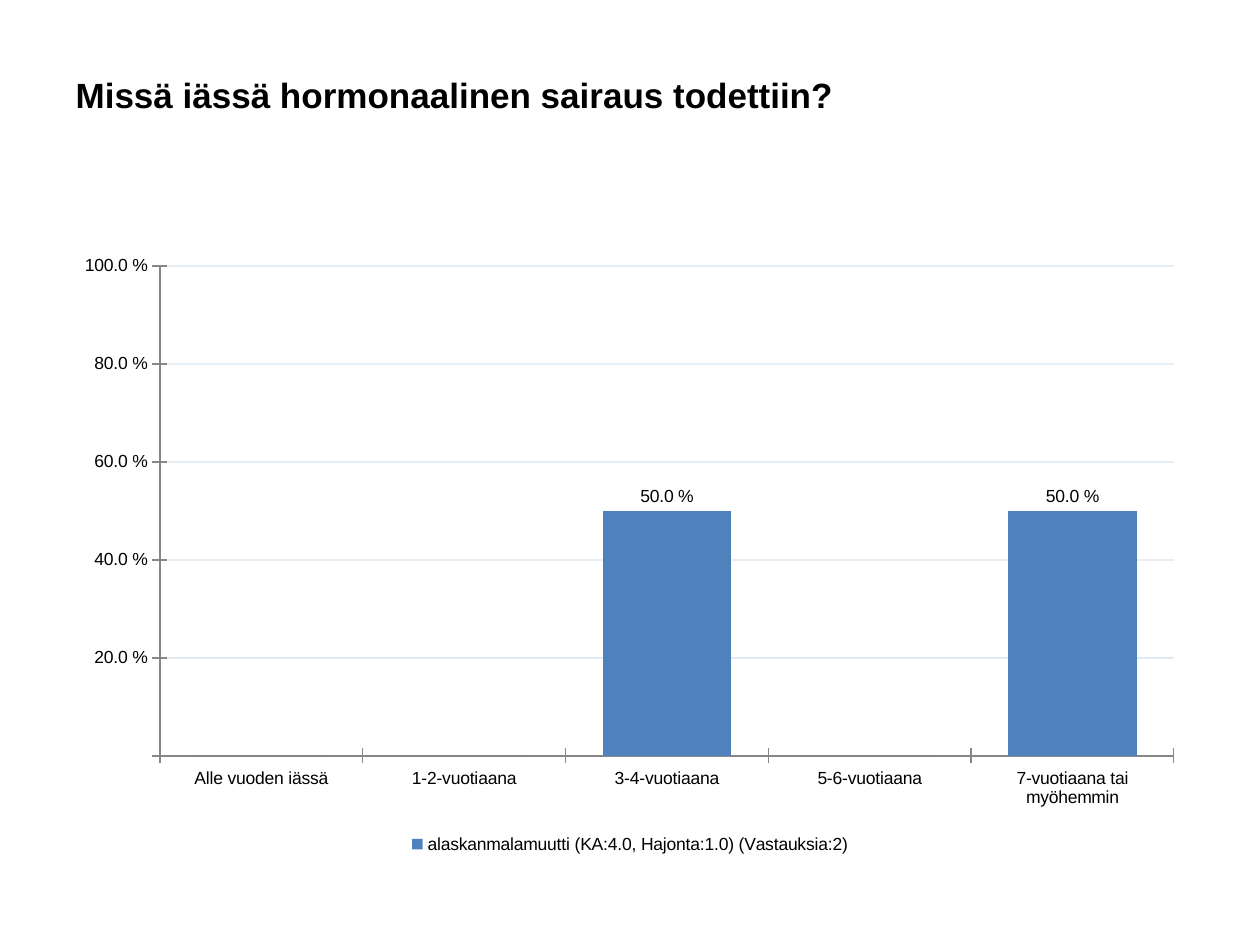
import pptx
import pptx.chart.data
import pptx.dml.color
import pptx.enum.chart
import pptx.enum.text
import pptx.oxml
import pptx.oxml.ns
import pptx.util
from lxml import etree

# Content
QUESTION = "Missä iässä hormonaalinen sairaus todettiin?"
BREED = "alaskanmalamuutti (KA:4.0, Hajonta:1.0) (Vastauksia:2)"
SHARES = {
    "Alle vuoden iässä": 0,
    "1-2-vuotiaana": 0,
    "3-4-vuotiaana": 0.5,
    "5-6-vuotiaana": 0,
    "7-vuotiaana tai myöhemmin": 0.5,
}
PERCENT = "0.0\\ %;;;"  # zero stays blank

# Style
FONT = "Arial"
BLACK = pptx.dml.color.RGBColor(0, 0, 0)
BLUE = pptx.dml.color.RGBColor(0x4F, 0x81, 0xBD)
GRAY = pptx.dml.color.RGBColor(0x86, 0x86, 0x86)
GRID_ALPHA = 20000

# Places in px: left, top, width, height
PX = pptx.util.Inches(1) / 126
SLIDE_SIZE = (1260, 945)
QUESTION_BOX = (63, 45, 1134, 100)
CHART_BOX = (63, 244, 1134, 615)
PLOT_BOX = (160, 266, 1014, 490)


def emu(lengths):
    return [round(length * PX) for length in lengths]


def style(font, size, bold=False):
    font.name = FONT
    font.size = pptx.util.Pt(size)
    font.bold = bold
    font.color.rgb = BLACK


def place_plot(chart):
    left, top, width, height = CHART_BOX
    plot_left, plot_top, plot_width, plot_height = PLOT_BOX
    fractions = {
        "x": (plot_left - left) / width,
        "y": (plot_top - top) / height,
        "w": plot_width / width,
        "h": plot_height / height,
    }
    qn = pptx.oxml.ns.qn
    plot_area = chart.element.find(".//" + qn("c:plotArea"))
    layout = plot_area.find(qn("c:layout"))
    if layout is None:
        layout = etree.Element(qn("c:layout"))
        plot_area.insert(0, layout)
    manual = etree.SubElement(layout, qn("c:manualLayout"))
    settings = {"layoutTarget": "inner", "xMode": "edge", "yMode": "edge"}
    settings.update({key: f"{value:.4f}" for key, value in fractions.items()})
    for tag, value in settings.items():
        etree.SubElement(manual, qn("c:" + tag)).set("val", value)


def main():
    deck = pptx.Presentation()
    deck.slide_width, deck.slide_height = emu(SLIDE_SIZE)
    slide = deck.slides.add_slide(deck.slide_layouts[5])

    # Question
    question = slide.shapes.title
    question.left, question.top, question.width, question.height = emu(QUESTION_BOX)
    question.text_frame.text = QUESTION
    question.text_frame.vertical_anchor = pptx.enum.text.MSO_ANCHOR.MIDDLE
    paragraph = question.text_frame.paragraphs[0]
    paragraph.alignment = pptx.enum.text.PP_ALIGN.LEFT
    style(paragraph.font, 20, bold=True)

    # Column chart
    answers = pptx.chart.data.CategoryChartData(number_format=PERCENT)
    answers.categories = list(SHARES)
    answers.add_series(BREED, list(SHARES.values()))
    chart = slide.shapes.add_chart(
        pptx.enum.chart.XL_CHART_TYPE.COLUMN_CLUSTERED, *emu(CHART_BOX), answers
    ).chart
    chart.has_title = False
    style(chart.font, 10)
    place_plot(chart)

    # Columns and labels
    plot = chart.plots[0]
    plot.gap_width = 58
    plot.vary_by_categories = False
    series = plot.series[0]
    series.format.fill.solid()
    series.format.fill.fore_color.rgb = BLUE
    labels = series.data_labels
    labels.show_value = True
    labels.number_format = PERCENT
    labels.number_format_is_linked = False
    labels.position = pptx.enum.chart.XL_LABEL_POSITION.OUTSIDE_END
    style(labels.font, 10)

    # Axes
    for axis in (chart.category_axis, chart.value_axis):
        axis.major_tick_mark = pptx.enum.chart.XL_TICK_MARK.CROSS
        axis.minor_tick_mark = pptx.enum.chart.XL_TICK_MARK.NONE
        axis.tick_labels.number_format = PERCENT
        axis.tick_labels.number_format_is_linked = False
        axis.format.line.color.rgb = GRAY
        axis.format.line.width = pptx.util.Pt(0.75)
        style(axis.tick_labels.font, 10)
    shares = chart.value_axis
    shares.minimum_scale, shares.maximum_scale, shares.major_unit = 0, 1, 0.2

    # Pale gridlines
    shares.has_major_gridlines = True
    grid = shares.major_gridlines.format.line
    grid.color.rgb = BLUE
    grid.width = pptx.util.Pt(0.75)
    qn = pptx.oxml.ns.qn
    grid_color = chart.element.find(".//" + qn("c:majorGridlines")).find(".//" + qn("a:srgbClr"))
    etree.SubElement(grid_color, qn("a:alpha")).set("val", str(GRID_ALPHA))

    # Legend
    chart.has_legend = True
    chart.legend.position = pptx.enum.chart.XL_LEGEND_POSITION.BOTTOM
    chart.legend.include_in_layout = False
    style(chart.legend.font, 10)

    deck.save("out.pptx")


if __name__ == "__main__":
    main()
